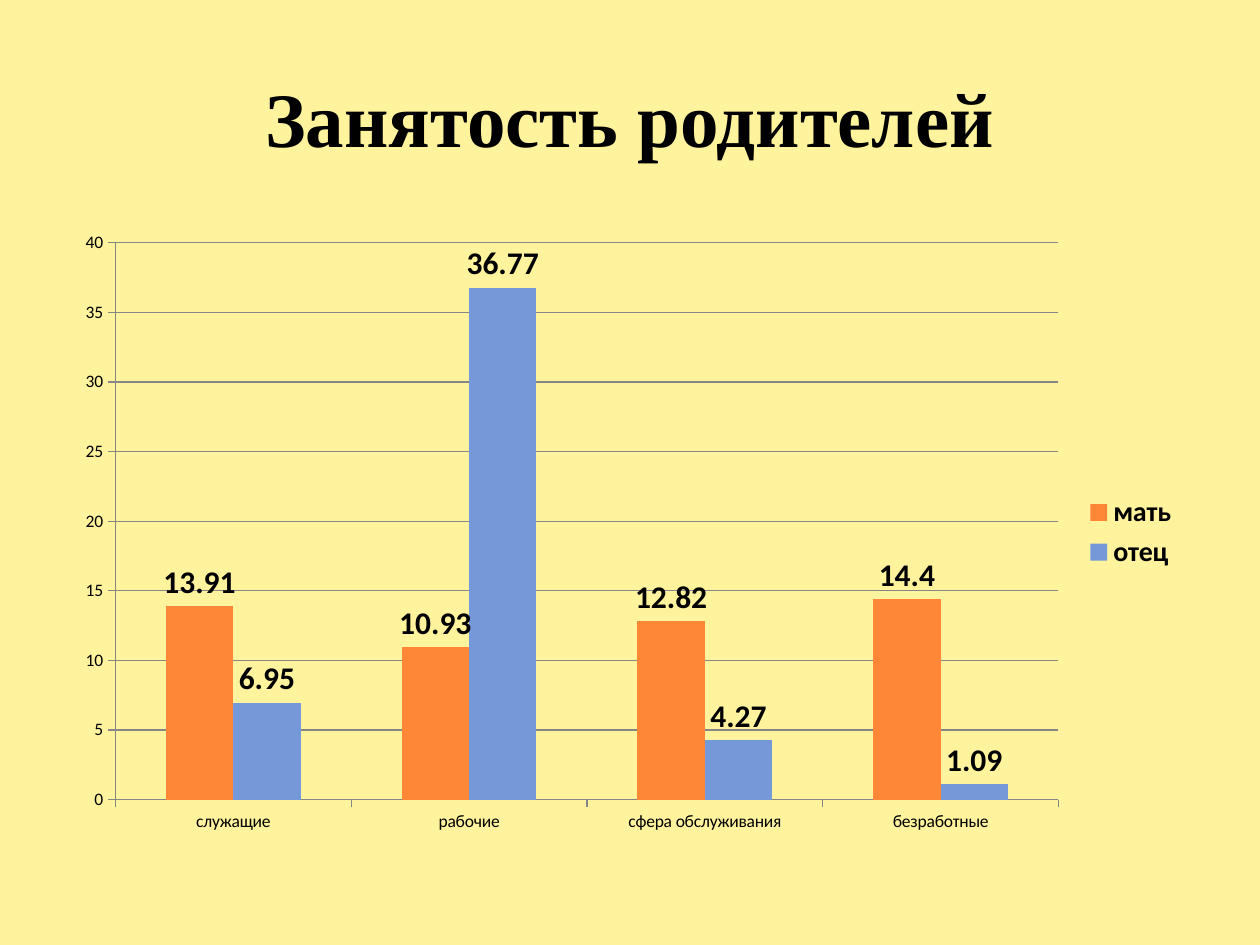
from dataclasses import dataclass

from pptx import Presentation
from pptx.chart.data import CategoryChartData as Data
from pptx.dml.color import RGBColor as RGB
from pptx.enum.chart import XL_CHART_TYPE as Kind
from pptx.enum.chart import XL_LABEL_POSITION as Spot
from pptx.enum.chart import XL_LEGEND_POSITION as Side
from pptx.enum.chart import XL_TICK_MARK as Tick
from pptx.enum.text import MSO_ANCHOR as Anchor
from pptx.enum.text import PP_ALIGN as Align
from pptx.util import Inches, Pt


@dataclass(frozen=True)
class Theme:
    """Colours, fonts and type sizes of the slide."""

    back: str = "FFF39D"
    ink: str = "000000"
    line: str = "868686"
    bars: tuple = ("FE8637", "7598D9")
    serif: str = "Times New Roman"
    sans: str = "Calibri"
    head: int = 44
    label: int = 18
    key: int = 16
    small: int = 10


LOOK = Theme()
WIDE, HIGH = Inches(10), Inches(7.5)
GROUPS = ("служащие", "рабочие", "сфера обслуживания", "безработные")
JOBS = {
    "мать ": (13.91, 10.93, 12.82, 14.4),
    "отец": (6.95, 36.77, 4.27, 1.09),
}


def area(left, top, width, height):
    """Turn shares of the slide's size into lengths."""
    return [int(n * size) for n, size in zip((left, top, width, height), (WIDE, HIGH) * 2)]


def style(font, size, name=LOOK.sans, bold=False):
    """Set the face, size, weight and colour of a font."""
    font.name, font.size, font.bold = name, Pt(size), bold
    font.color.rgb = RGB.from_string(LOOK.ink)


def write(slide, text, box, align=Align.CENTER, anchor=Anchor.MIDDLE, **form):
    """Add a text box with one formatted line."""
    frame = slide.shapes.add_textbox(*box).text_frame
    frame.word_wrap, frame.vertical_anchor = True, anchor
    line = frame.paragraphs[0]
    line.alignment = align
    run = line.add_run()
    run.text = text
    style(run.font, **form)


def trace(line):
    """Draw an axis or grid line thin and grey."""
    line.color.rgb, line.width = RGB.from_string(LOOK.line), Pt(0.75)


def tune(chart):
    """Format both axes and the grid."""
    for axis in (chart.category_axis, chart.value_axis):
        axis.major_tick_mark, axis.minor_tick_mark = Tick.OUTSIDE, Tick.NONE
        trace(axis.format.line)
        style(axis.tick_labels.font, LOOK.small)
    scale = chart.value_axis
    scale.minimum_scale, scale.maximum_scale, scale.major_unit = 0, 40, 5
    scale.has_major_gridlines = True
    trace(scale.major_gridlines.format.line)


def paint(row, tone):
    """Fill a series and show its values above the bars."""
    row.format.fill.solid()
    row.format.fill.fore_color.rgb = RGB.from_string(tone)
    tags = row.data_labels
    tags.show_value, tags.position = True, Spot.OUTSIDE_END
    style(tags.font, LOOK.label, bold=True)


def plot(slide, box):
    """Add the clustered column chart with its legend."""
    data = Data(number_format="General")
    data.categories = GROUPS
    for name, vals in JOBS.items():
        data.add_series(name, vals)
    chart = slide.shapes.add_chart(Kind.COLUMN_CLUSTERED, *box, data).chart
    style(chart.font, LOOK.small)
    chart.has_title = False
    chart.has_legend = True
    chart.legend.position, chart.legend.include_in_layout = Side.RIGHT, False
    style(chart.legend.font, LOOK.key, bold=True)
    tune(chart)
    bars = chart.plots[0]
    bars.gap_width, bars.overlap, bars.vary_by_categories = 150, 0, False
    for row, tone in zip(bars.series, LOOK.bars):
        paint(row, tone)


def main():
    """Build the slide and save it."""
    deck = Presentation()
    deck.slide_width, deck.slide_height = WIDE, HIGH
    slide = deck.slides.add_slide(deck.slide_layouts[6])
    fill = slide.background.fill
    fill.solid()
    fill.fore_color.rgb = RGB.from_string(LOOK.back)
    write(slide, "Занятость родителей", area(0.05, 0.04, 0.9, 1 / 6),
          size=LOOK.head, name=LOOK.serif, bold=True)
    plot(slide, area(0.05, 7 / 30, 0.9, 0.66))
    deck.save("out.pptx")


if __name__ == "__main__":
    main()
